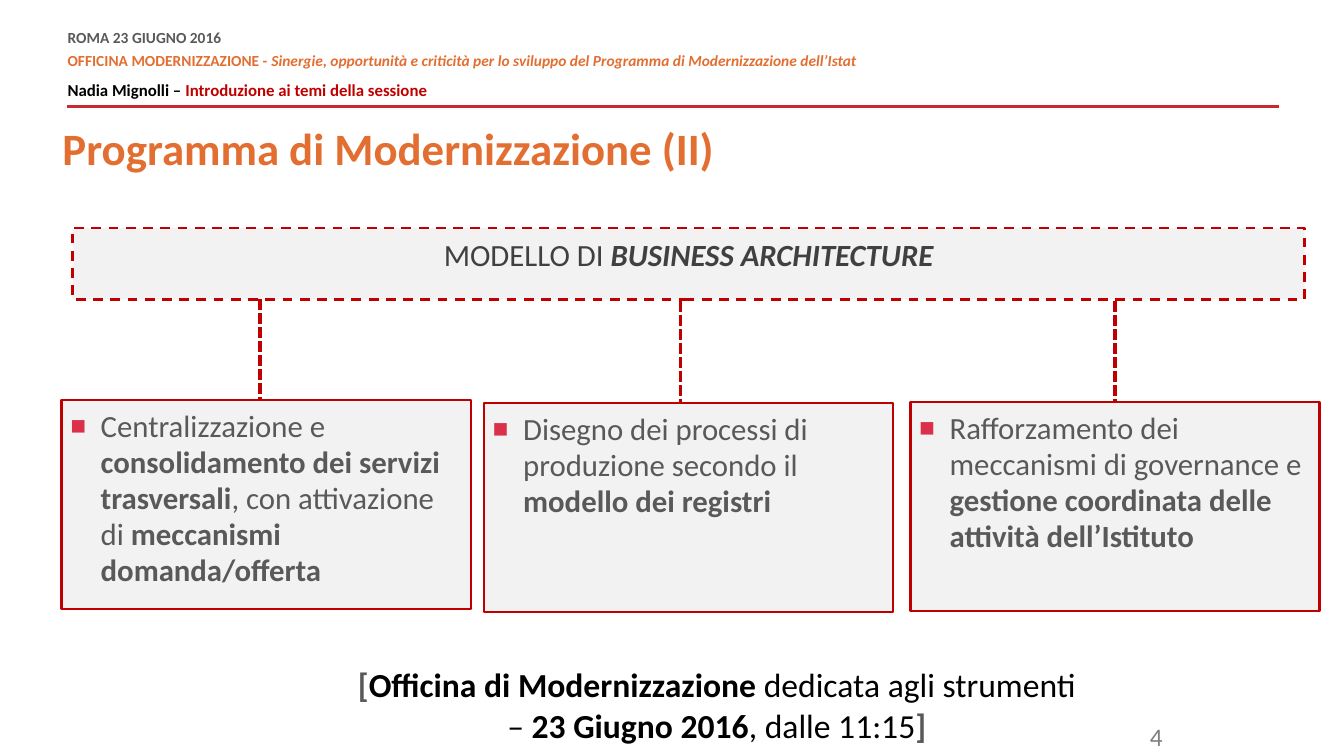
from dataclasses import dataclass

from lxml import etree
from pptx import Presentation
from pptx import util as u
from pptx.dml.color import RGBColor
from pptx.enum import dml, shapes, text
from pptx.oxml import ns

ORANGE = RGBColor(0xE2, 0x6F, 0x31)
RED = RGBColor(0xC0, 0x00, 0x00)
RULE_RED = RGBColor(0xC7, 0x2A, 0x31)
BULLET_RED = "DA304A"
BLACK = RGBColor(0x00, 0x00, 0x00)
CHARCOAL = RGBColor(0x40, 0x40, 0x40)
GREY = RGBColor(0x59, 0x59, 0x59)
PAGE_GREY = RGBColor(0x7F, 0x7F, 0x7F)
PALE = RGBColor(0xF2, 0xF2, 0xF2)
FONT = "Calibri"
CENTER = text.PP_ALIGN.CENTER
RIGHT = text.PP_ALIGN.RIGHT


@dataclass
class Span:
    words: str
    size: float
    color: RGBColor = GREY
    bold: bool = False
    italic: bool = False


@dataclass
class Pillar:
    left: float
    top: float
    stem: float
    stem_top: float
    spans: list[Span]


PILLAR_WIDTH, PILLAR_HEIGHT = 4.06, 2.07
PILLARS = [
    Pillar(0.61, 3.97, 2.58, 2.97, [
        Span("Centralizzazione e ", 22),
        Span("consolidamento dei servizi trasversali", 22, bold=True),
        Span(", con attivazione di ", 22),
        Span("meccanismi domanda/offerta", 22, bold=True)]),
    Pillar(4.8, 4, 6.75, 2.99, [
        Span("Disegno dei processi di produzione secondo il ", 22),
        Span("modello dei registri", 22, bold=True)]),
    Pillar(9.03, 3.99, 11.06, 2.99, [
        Span("Rafforzamento dei meccanismi di governance e ", 22),
        Span("gestione coordinata delle attività dell’Istituto", 22, bold=True)]),
]


def add_spans(para, spans: list[Span]) -> None:
    for span in spans:
        run = para.add_run()
        run.text = span.words
        font = run.font
        font.name, font.size = FONT, u.Pt(span.size)
        font.bold, font.italic = span.bold, span.italic
        font.color.rgb = span.color


def set_frame(box, margin: float | None = None):
    """Prepare the text frame of a box and return its first paragraph."""
    frame = box.text_frame
    frame.word_wrap = True
    frame.vertical_anchor = text.MSO_ANCHOR.TOP
    if margin is not None:
        frame.margin_left = frame.margin_right = u.Inches(margin)
        frame.margin_top = frame.margin_bottom = u.Inches(margin)
    return frame.paragraphs[0]


def add_text(page, left: float, top: float, width: float, height: float,
             spans: list[Span], align=None, margin: float | None = None):
    box = page.shapes.add_textbox(*map(u.Inches, (left, top, width, height)))
    para = set_frame(box, margin)
    para.alignment = align
    add_spans(para, spans)
    return box


def add_panel(page, left: float, top: float, width: float, height: float):
    panel = page.shapes.add_shape(shapes.MSO_SHAPE.RECTANGLE,
                                  *map(u.Inches, (left, top, width, height)))
    panel.shadow.inherit = False
    panel.fill.solid()
    panel.fill.fore_color.rgb = PALE
    panel.line.color.rgb = RED
    panel.line.width = u.Pt(1.75)
    return panel


def add_line(page, start: tuple[float, float], end: tuple[float, float],
             color: RGBColor, width: float, dash=None) -> None:
    line = page.shapes.add_connector(shapes.MSO_CONNECTOR.STRAIGHT,
                                     *map(u.Inches, start + end))
    line.line.color.rgb = color
    line.line.width = u.Pt(width)
    if dash is not None:
        line.line.dash_style = dash
    etree.SubElement(line._element.spPr, ns.qn("a:effectLst"))


def add_bullet(para) -> None:
    props = para._p.get_or_add_pPr()
    props.set("marL", str(u.Inches(0.31)))
    props.set("indent", str(-u.Inches(0.31)))
    color = etree.SubElement(props, ns.qn("a:buClr"))
    etree.SubElement(color, ns.qn("a:srgbClr"), val=BULLET_RED)
    etree.SubElement(props, ns.qn("a:buSzPct"), val="160000")
    etree.SubElement(props, ns.qn("a:buFont"), typeface=FONT)
    etree.SubElement(props, ns.qn("a:buChar"), char="▪")


def add_header(page) -> None:
    add_line(page, (12.69, 1.06), (0.66, 1.06), RULE_RED, 2)
    box = add_text(page, 0.67, 0.31, 10.02, 0.7,
                   [Span("ROMA 23 GIUGNO 2016", 11, bold=True)], margin=0)
    event = box.text_frame.add_paragraph()
    event.space_before = u.Pt(6)
    add_spans(event, [
        Span("OFFICINA MODERNIZZAZIONE - ", 11, ORANGE, True),
        Span("Sinergie, opportunità e criticità per lo sviluppo del "
             "Programma di Modernizzazione dell’Istat", 11, ORANGE, True, True)])
    speaker = box.text_frame.add_paragraph()
    speaker.space_before = u.Pt(10.8)
    add_spans(speaker, [
        Span("Nadia Mignolli – ", 12, BLACK, True),
        Span("Introduzione ai temi della sessione", 12, RED, True)])
    for para in box.text_frame.paragraphs:
        para.line_spacing = u.Pt(10.8)


def add_pillar(page, pillar: Pillar) -> None:
    panel = add_panel(page, pillar.left, pillar.top, PILLAR_WIDTH, PILLAR_HEIGHT)
    para = set_frame(panel, 0.08)
    para.alignment = text.PP_ALIGN.LEFT
    para.line_spacing = 0.98
    add_bullet(para)
    add_spans(para, pillar.spans)
    add_line(page, (pillar.stem, pillar.stem_top), (pillar.stem, pillar.top),
             RED, 2.5, dml.MSO_LINE.SQUARE_DOT)


def main() -> None:
    deck = Presentation()
    deck.slide_width, deck.slide_height = u.Inches(13.33), u.Inches(7.5)
    page = deck.slides.add_slide(deck.slide_layouts[6])

    add_header(page)
    title = add_text(page, 0.62, 1.26, 10.5, 0.47,
                     [Span("Programma di Modernizzazione (II)", 32, ORANGE, True)],
                     margin=0)
    title.text_frame.paragraphs[0].line_spacing = 0.9

    model = add_panel(page, 0.72, 2.26, 12.22, 0.71)
    model.line.dash_style = dml.MSO_LINE.DASH
    para = set_frame(model, 0.08)
    para.alignment = CENTER
    add_spans(para, [Span("MODELLO DI ", 22, CHARCOAL),
                     Span("BUSINESS ARCHITECTURE", 22, CHARCOAL, True, True)])

    for pillar in PILLARS:
        add_pillar(page, pillar)

    add_text(page, 3.36, 6.54, 7.5, 0.91, [
        Span("[", 24, bold=True),
        Span("Officina di Modernizzazione ", 24, BLACK, True),
        Span("dedicata agli strumenti – ", 24, BLACK),
        Span("23 Giugno 2016", 24, BLACK, True),
        Span(", dalle 11:15", 24, BLACK),
        Span("]", 24, bold=True)], CENTER)
    add_text(page, 8.63, 7.11, 3, 0.4, [Span("4", 18, PAGE_GREY)], RIGHT)
    deck.save("out.pptx")


if __name__ == "__main__":
    main()
